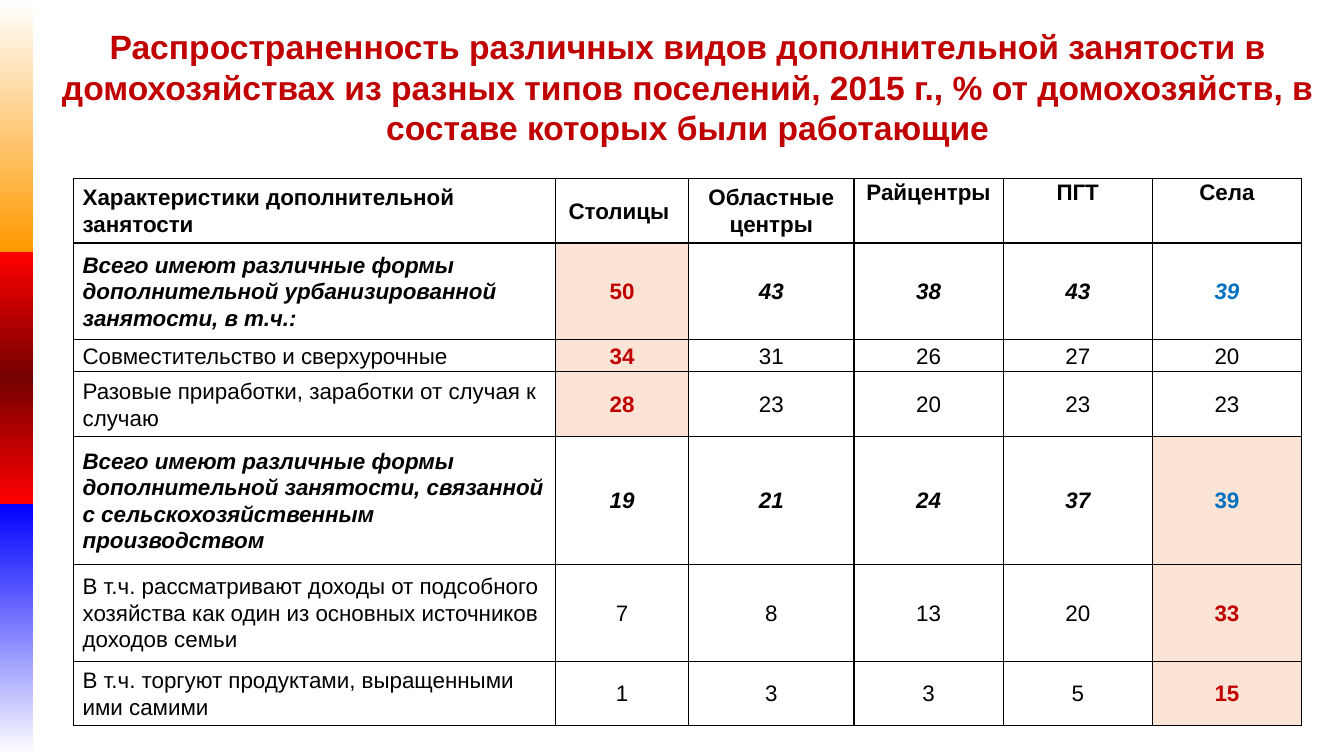
import pptx
import pptx.util
import pptx.dml.color
import pptx.enum.shapes
import pptx.enum.text
import pptx.oxml
import pptx.oxml.ns

Inches = pptx.util.Inches
ALIGN = pptx.enum.text.PP_ALIGN
ANCHOR = pptx.enum.text.MSO_ANCHOR

BLACK, RED, BLUE, PEACH = "000000", "C00000", "0070C0", "FBE4D5"
TITLE = ("Распространенность различных видов дополнительной занятости в "
         "домохозяйствах из разных типов поселений, 2015 г., % от домохозяйств, "
         "в составе которых были работающие")
BARS = [("FFFFFF", "FF9900"), ("FF0000", "760000", "FF0000"), ("0000FF", "FFFFFF")]
WIDTHS = [4.78, 1.32, 1.64, 1.48, 1.48, 1.48]
HEIGHTS = [0.64, 0.96, 0.32, 0.64, 1.27, 0.96, 0.64]
ROWS = [
    ("Характеристики дополнительной занятости", "Столицы ", "Областные центры",
     "Райцентры", "ПГТ", "Села"),
    ("Всего имеют различные формы дополнительной урбанизированной занятости, в т.ч.:",
     50, 43, 38, 43, 39),
    ("Совместительство и сверхурочные", 34, 31, 26, 27, 20),
    ("Разовые приработки, заработки от случая к случаю", 28, 23, 20, 23, 23),
    ("Всего имеют различные формы дополнительной занятости, связанной "
     "с сельскохозяйственным производством", 19, 21, 24, 37, 39),
    ("В т.ч. рассматривают доходы от подсобного хозяйства как один из основных "
     "источников доходов семьи", 7, 8, 13, 20, 33),
    ("В т.ч. торгуют продуктами, выращенными ими самими", 1, 3, 3, 5, 15),
]
TOTALS = (1, 4)
PEAKS = {(1, 1), (2, 1), (3, 1), (4, 5), (5, 5), (6, 5)}
BLUES = {(1, 5), (4, 5)}


def color(text):
    return pptx.dml.color.RGBColor.from_string(text)


def apply(item, values):
    for name, value in values.items():
        setattr(item, name, value)


def write(frame, text, size, shade, align, bold=True, italic=False, space=1.0):
    par = frame.paragraphs[0]
    apply(par, {"alignment": align, "line_spacing": space})
    run = par.add_run()
    run.text = text
    apply(run.font, {"name": "Arial", "size": pptx.util.Pt(size),
                     "bold": bold, "italic": italic})
    run.font.color.rgb = color(shade)


def add_bar(slide, top, height, shades):
    """Add a side bar with an even top-to-bottom gradient."""
    bar = slide.shapes.add_shape(pptx.enum.shapes.MSO_SHAPE.RECTANGLE,
                                 0, Inches(top), Inches(0.33), Inches(height))
    bar.shadow.inherit = False
    bar.line.fill.background()
    step = 100000 // (len(shades) - 1)
    stops = "".join(f'<a:gs pos="{i * step}"><a:srgbClr val="{shade}"/></a:gs>'
                    for i, shade in enumerate(shades))
    grad = pptx.oxml.parse_xml(
        f'<a:gradFill {pptx.oxml.ns.nsdecls("a")}><a:gsLst>{stops}</a:gsLst>'
        '<a:lin ang="5400000" scaled="0"/></a:gradFill>')
    bar.element.spPr.find(pptx.oxml.ns.qn("a:prstGeom")).addnext(grad)


def add_title(slide):
    title = slide.shapes.title
    apply(title, {"left": Inches(0.31), "top": Inches(0.21),
                  "width": Inches(13.02), "height": Inches(0.95)})
    apply(title.text_frame, {"word_wrap": True, "vertical_anchor": ANCHOR.TOP,
                             "auto_size": pptx.enum.text.MSO_AUTO_SIZE.NONE})
    write(title.text_frame, TITLE, 24, RED, ALIGN.CENTER)


def add_edges(cell):
    props = cell._tc.get_or_add_tcPr()
    for side in "LRTB":
        props.append(pptx.oxml.parse_xml(
            f'<a:ln{side} {pptx.oxml.ns.nsdecls("a")} w="12700"><a:solidFill>'
            f'<a:srgbClr val="{BLACK}"/></a:solidFill></a:ln{side}>'))


def fill_cell(cell, row, col, text):
    peak, blue = (row, col) in PEAKS, (row, col) in BLUES
    total = row in TOTALS
    high = row == 0 and col > 2
    apply(cell, {"margin_left": Inches(0.09), "margin_right": Inches(0.09),
                 "margin_top": 0, "margin_bottom": 0,
                 "vertical_anchor": ANCHOR.TOP if high else ANCHOR.MIDDLE})
    add_edges(cell)
    if peak:
        cell.fill.solid()
        cell.fill.fore_color.rgb = color(PEACH)
    else:
        cell.fill.background()
    shade = BLUE if blue else RED if peak else BLACK
    write(cell.text_frame, str(text), 16, shade,
          ALIGN.CENTER if col else ALIGN.LEFT,
          bold=row == 0 or total or peak, italic=total and not peak, space=1.07)


def add_grid(slide):
    table = slide.shapes.add_table(
        len(ROWS), len(WIDTHS), Inches(0.73), Inches(1.77),
        Inches(sum(WIDTHS)), Inches(sum(HEIGHTS))).table
    apply(table, {"first_row": False, "horz_banding": False})
    for col, width in zip(table.columns, WIDTHS):
        col.width = Inches(width)
    for row, height in zip(table.rows, HEIGHTS):
        row.height = Inches(height)
    for r, texts in enumerate(ROWS):
        for c, text in enumerate(texts):
            fill_cell(table.cell(r, c), r, c, text)


def main():
    deck = pptx.Presentation()
    apply(deck, {"slide_width": Inches(13.33), "slide_height": Inches(7.5)})
    slide = deck.slides.add_slide(deck.slide_layouts[5])
    for i, shades in enumerate(BARS):
        add_bar(slide, 2.5 * i, 2.5, shades)
    add_title(slide)
    add_grid(slide)
    deck.save("out.pptx")


if __name__ == "__main__":
    main()
